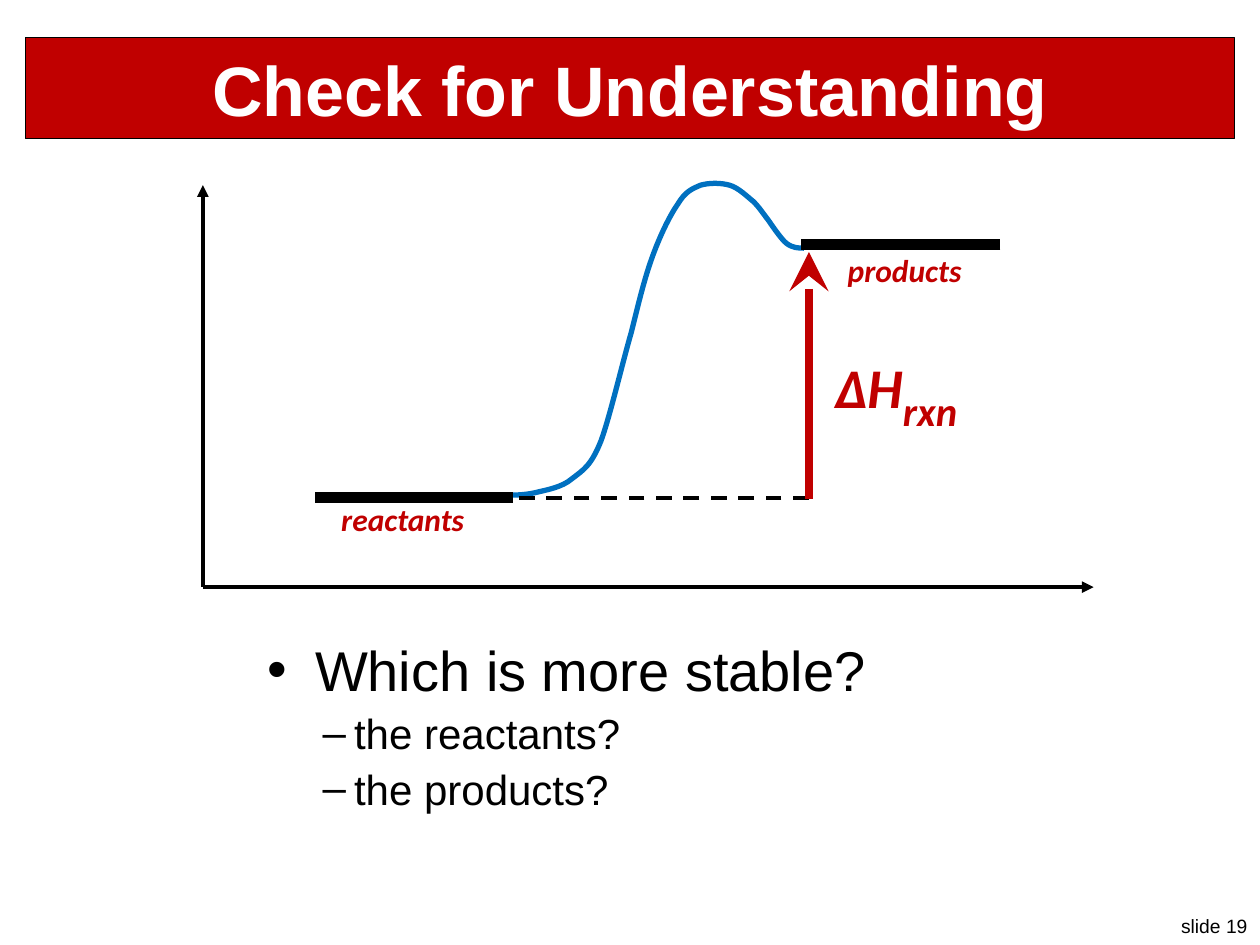
from dataclasses import dataclass
from typing import Any

from lxml import etree
from pptx import Presentation
from pptx import util as u
from pptx.dml.color import RGBColor
from pptx.enum import dml, shapes, text
from pptx.oxml.ns import qn

HUES = {"red": "C00000", "blue": "0070C0", "black": "000000", "white": "FFFFFF"}
LEFT, MID, RIGHT = text.PP_ALIGN.LEFT, text.PP_ALIGN.CENTER, text.PP_ALIGN.RIGHT

# Start knot, then (control, control, end) for each bend of the energy curve
START = (6.38, 1.97)
BENDS = [
    ((6.34, 1.97), (6.29, 1.97), (6.24, 1.93)),
    ((6.2, 1.9), (6.1, 1.75), (6.1, 1.75)),
    ((6.06, 1.7), (6.03, 1.65), (5.98, 1.6)),
    ((5.93, 1.56), (5.86, 1.49), (5.79, 1.47)),
    ((5.72, 1.45), (5.63, 1.45), (5.56, 1.47)),
    ((5.49, 1.5), (5.44, 1.52), (5.38, 1.62)),
    ((5.31, 1.72), (5.23, 1.89), (5.17, 2.06)),
    ((5.11, 2.23), (5.07, 2.4), (5.01, 2.64)),
    ((4.94, 2.88), (4.84, 3.31), (4.77, 3.5)),
    ((4.69, 3.7), (4.63, 3.73), (4.54, 3.8)),
    ((4.46, 3.87), (4.33, 3.89), (4.25, 3.91)),
    ((4.17, 3.93), (4.06, 3.93), (4.06, 3.93)),
]


def rgb(hue):
    return RGBColor.from_string(HUES[hue])


def inch(*vals):
    return [u.Inches(v) for v in vals]


def write(para, words, size=18, font="Arial", hue="black", bold=False,
          slant=False, base=0):
    run = para.add_run()
    run.text = words
    f = run.font
    f.size, f.name, f.bold, f.italic = u.Pt(size), font, bold, slant
    f.color.rgb = rgb(hue)
    if base:
        run._r.get_or_add_rPr().set("baseline", str(base * 1000))


@dataclass
class Deck:
    slide: Any
    font: str = "Calibri"
    accent: str = "red"

    def place(self, shape, box):
        shape.left, shape.top, shape.width, shape.height = inch(*box)

    def title(self, words, box):
        bar = self.slide.shapes.title
        self.place(bar, box)
        bar.fill.solid()
        bar.fill.fore_color.rgb = rgb(self.accent)
        bar.line.color.rgb = rgb("black")
        bar.line.width = u.Pt(0.75)
        frame = bar.text_frame
        frame.auto_size = text.MSO_AUTO_SIZE.NONE
        frame.vertical_anchor = text.MSO_ANCHOR.MIDDLE
        frame.paragraphs[0].alignment = MID
        write(frame.paragraphs[0], words, size=40, hue="white", bold=True)

    def body(self, items, box):
        """Fill the body with (level, words) pairs."""
        hold = self.slide.placeholders[1]
        self.place(hold, box)
        frame = hold.text_frame
        frame.auto_size = text.MSO_AUTO_SIZE.NONE
        looks = [(32, 12, 0.38, -0.38, "•"), (24, 3, 0.69, -0.25, "–")]
        for i, (level, words) in enumerate(items):
            para = frame.add_paragraph() if i else frame.paragraphs[0]
            size, gap, left, hang, mark = looks[level]
            para.level = level
            para.space_before = u.Pt(gap)
            props = para._p.get_or_add_pPr()
            props.set("marL", str(u.Inches(left)))
            props.set("indent", str(u.Inches(hang)))
            etree.SubElement(props, qn("a:buChar")).set("char", mark)
            write(para, words, size=size)

    def label(self, parts, box, align=LEFT, **look):
        """Text box from (words, format) parts; look holds shared format."""
        frame = self.slide.shapes.add_textbox(*inch(*box)).text_frame
        frame.word_wrap = False
        frame.auto_size = text.MSO_AUTO_SIZE.SHAPE_TO_FIT_TEXT
        frame.paragraphs[0].alignment = align
        for words, own in parts:
            write(frame.paragraphs[0], words, **{**look, **own})

    def note(self, parts, box, align=LEFT):
        self.label(parts, box, align, font=self.font, hue=self.accent,
                   bold=True, slant=True)

    def line(self, start, end, width=2.25, hue="black", head=None, size="med",
             dash=False):
        """Straight line; an arrowhead sits at its start."""
        rule = self.slide.shapes.add_connector(
            shapes.MSO_CONNECTOR.STRAIGHT, *inch(*start, *end))
        rule.line.width = u.Pt(width)
        rule.line.color.rgb = rgb(hue)
        if dash:
            rule.line.dash_style = dml.MSO_LINE.DASH
        if head:
            tip = etree.SubElement(rule.line._get_or_add_ln(), qn("a:headEnd"))
            for key, val in (("type", head), ("w", size), ("len", size)):
                tip.set(key, val)
        etree.SubElement(rule._element.spPr, qn("a:effectLst"))

    def curve(self, start, bends, width, hue):
        """Freeform through the knots, its segments turned into Bezier bends."""
        first, *rest = [inch(*p) for p in (start, *(b[-1] for b in bends))]
        pen = self.slide.shapes.build_freeform(*first)
        pen.add_line_segments(rest, close=False)
        shape = pen.convert_to_shape()
        for seg, bend in zip(list(shape._element.iter(qn("a:lnTo"))), bends):
            seg.tag = qn("a:cubicBezTo")
            seg.remove(seg[0])
            for x, y in bend:
                pt = etree.SubElement(seg, qn("a:pt"))
                pt.set("x", str(u.Inches(x) - shape.left))
                pt.set("y", str(u.Inches(y) - shape.top))
        shape.shadow.inherit = False
        shape.fill.background()
        shape.line.width = u.Pt(width)
        shape.line.color.rgb = rgb(hue)


def main():
    prs = Presentation()
    prs.slide_width, prs.slide_height = inch(10, 7.5)
    deck = Deck(prs.slides.add_slide(prs.slide_layouts[1]))

    deck.label([("slide 19", {})], (9.25, 7.21, 0.75, 0.29), RIGHT, size=11)
    deck.title("Check for Understanding", (0.2, 0.3, 9.6, 0.8))
    deck.body([(0, "Which is more stable?"), (1, "the reactants?"),
               (1, "the products?")], (2.02, 4.99, 5.95, 2.04))

    deck.curve(START, BENDS, 3, "blue")
    zero = (1.61, 4.66)
    for tip in ((1.61, 1.47), (8.68, 4.66)):
        deck.line(tip, zero, head="triangle")

    low, high, rise = 3.95, 1.94, 6.42
    deck.line((4.07, low), (2.5, low), width=6)
    deck.note([("reactants", {})], (2.61, 3.92, 1.19, 0.4))
    deck.line((7.94, high), (6.36, high), width=6)
    deck.note([("products", {})], (6.61, 1.94, 1.12, 0.4), RIGHT)
    deck.line((rise, low), (3.88, low), dash=True)
    deck.line((rise, 2), (rise, 3.96), width=4.5, hue="red", head="stealth",
              size="lg")
    deck.note([("ΔH", {"size": 32}), ("rxn", {"size": 40, "base": -25})],
              (6.53, 2.64, 1.25, 0.64))

    prs.save("out.pptx")


if __name__ == "__main__":
    main()
